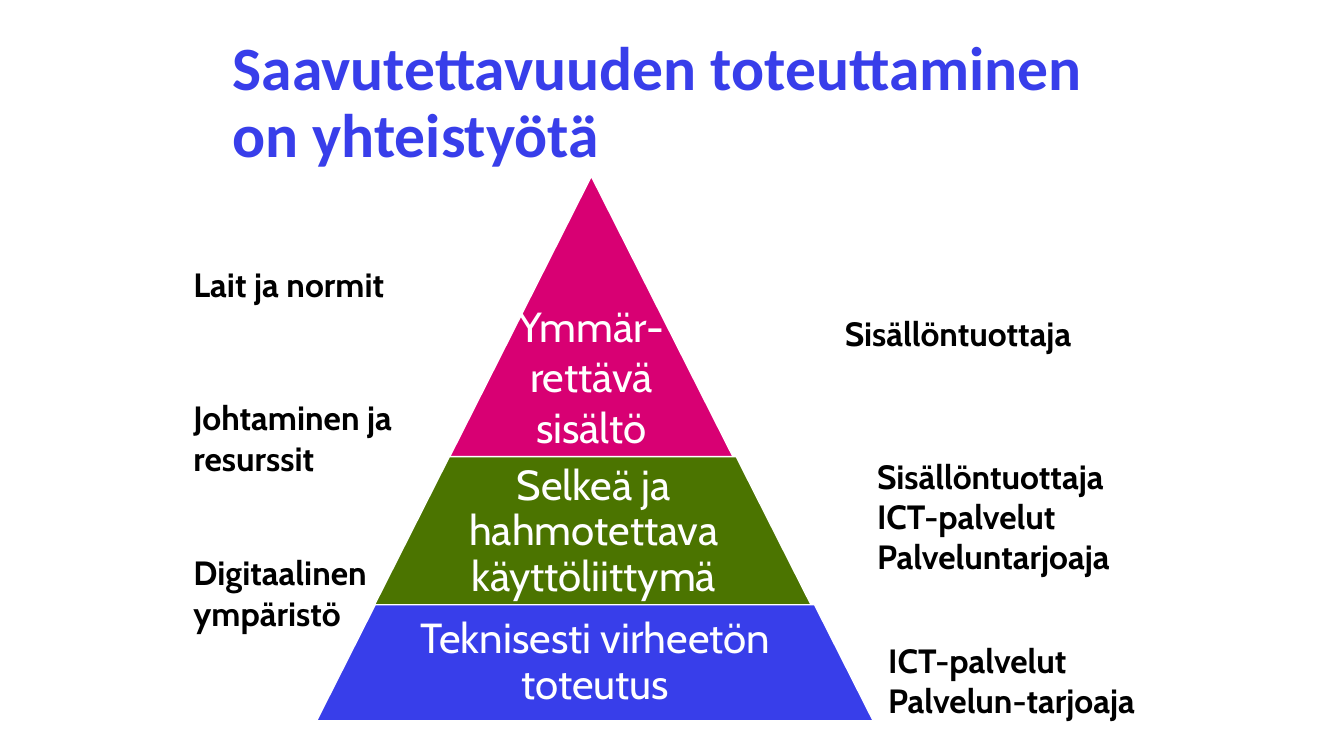
from dataclasses import dataclass

from pptx import Presentation
from pptx.dml.color import RGBColor
from pptx.enum.shapes import MSO_SHAPE
from pptx.enum.text import MSO_ANCHOR, PP_ALIGN
from pptx.util import Inches, Pt


@dataclass(frozen=True)
class Theme:
    """Colours, fonts and type sizes of the slide."""
    blue = RGBColor(0x38, 0x3E, 0xEA)
    green = RGBColor(0x4B, 0x74, 0x00)
    pink = RGBColor(0xD8, 0x00, 0x73)
    white = RGBColor(0xFF, 0xFF, 0xFF)
    black = RGBColor(0, 0, 0)
    heading_font = "Calibri"
    body_font = "Cabin"
    title_size = Pt(44)
    tier_size = Pt(30)
    label_size = Pt(24)


def add_text(box, text, size, color, font=Theme.body_font, bold=True,
             align=PP_ALIGN.LEFT, anchor=MSO_ANCHOR.TOP, spacing=1.0, inset=None):
    """Add a wrapped text box at box (left, top, width, height in inches)."""
    frame = slide.shapes.add_textbox(*map(Inches, box)).text_frame
    frame.word_wrap = True
    frame.vertical_anchor = anchor
    if inset is not None:
        frame.margin_left = frame.margin_right = Inches(inset)
        frame.margin_top = frame.margin_bottom = Inches(inset)
    frame.text = text
    for paragraph in frame.paragraphs:
        paragraph.alignment = align
        paragraph.line_spacing = spacing
        for run in paragraph.runs:
            run.font.name = font
            run.font.size = size
            run.font.bold = bold
            run.font.color.rgb = color


presentation = Presentation()
presentation.slide_width = Inches(13.33)
presentation.slide_height = Inches(7.5)
slide = presentation.slides.add_slide(presentation.slide_layouts[6])

add_text((2.21, 0.17, 8.97, 1.73), "Saavutettavuuden toteuttaminen on yhteistyötä",
         Theme.title_size, Theme.blue, font=Theme.heading_font,
         anchor=MSO_ANCHOR.MIDDLE, spacing=0.9)

# Pyramid tiers: outline, colour, text area, wording, line spacing
pyramid_slope = 0.505
tiers = [
    ((4.44, 1.75, 2.85, 2.82), Theme.pink, (4.44, 2.93, 2.85, 1.6),
     "Ymmär-\vrettävä\vsisältö", 1.0),
    ((3.7, 4.53, 4.36, 1.5), Theme.green, (4.47, 4.53, 2.84, 1.5),
     "Selkeä ja hahmotettava käyttöliittymä", 0.9),
    ((3.14, 6, 5.52, 1.15), Theme.blue, (4.11, 6, 3.59, 1.15),
     "Teknisesti virheetön toteutus", 0.9),
]
for outline, color, text_area, wording, spacing in tiers:
    tier = slide.shapes.add_shape(MSO_SHAPE.TRAPEZOID, *map(Inches, outline))
    tier.adjustments[0] = pyramid_slope
    tier.shadow.inherit = False
    tier.fill.solid()
    tier.fill.fore_color.rgb = color
    tier.line.color.rgb = Theme.white
    tier.line.width = Pt(1)
    add_text(text_area, wording, Theme.tier_size, Theme.white, bold=False,
             align=PP_ALIGN.CENTER, anchor=MSO_ANCHOR.MIDDLE,
             spacing=spacing, inset=0.04)

# Preconditions on the left, responsible parties on the right
labels = [
    ((1.82, 2.57, 3.38, 0.5), "Lait ja normit"),
    ((1.82, 3.89, 3.38, 0.91), "Johtaminen ja resurssit"),
    ((1.82, 5.43, 2.11, 0.91), "Digitaalinen ympäristö"),
    ((8.28, 3.06, 3.38, 0.5), "Sisällöntuottaja"),
    ((8.6, 4.47, 2.78, 1.31), "Sisällöntuottaja\nICT-palvelut\nPalveluntarjoaja"),
    ((8.71, 6.3, 2.95, 0.91), "ICT-palvelut\nPalvelun-tarjoaja"),
]
for box, wording in labels:
    add_text(box, wording, Theme.label_size, Theme.black)

presentation.save("out.pptx")
